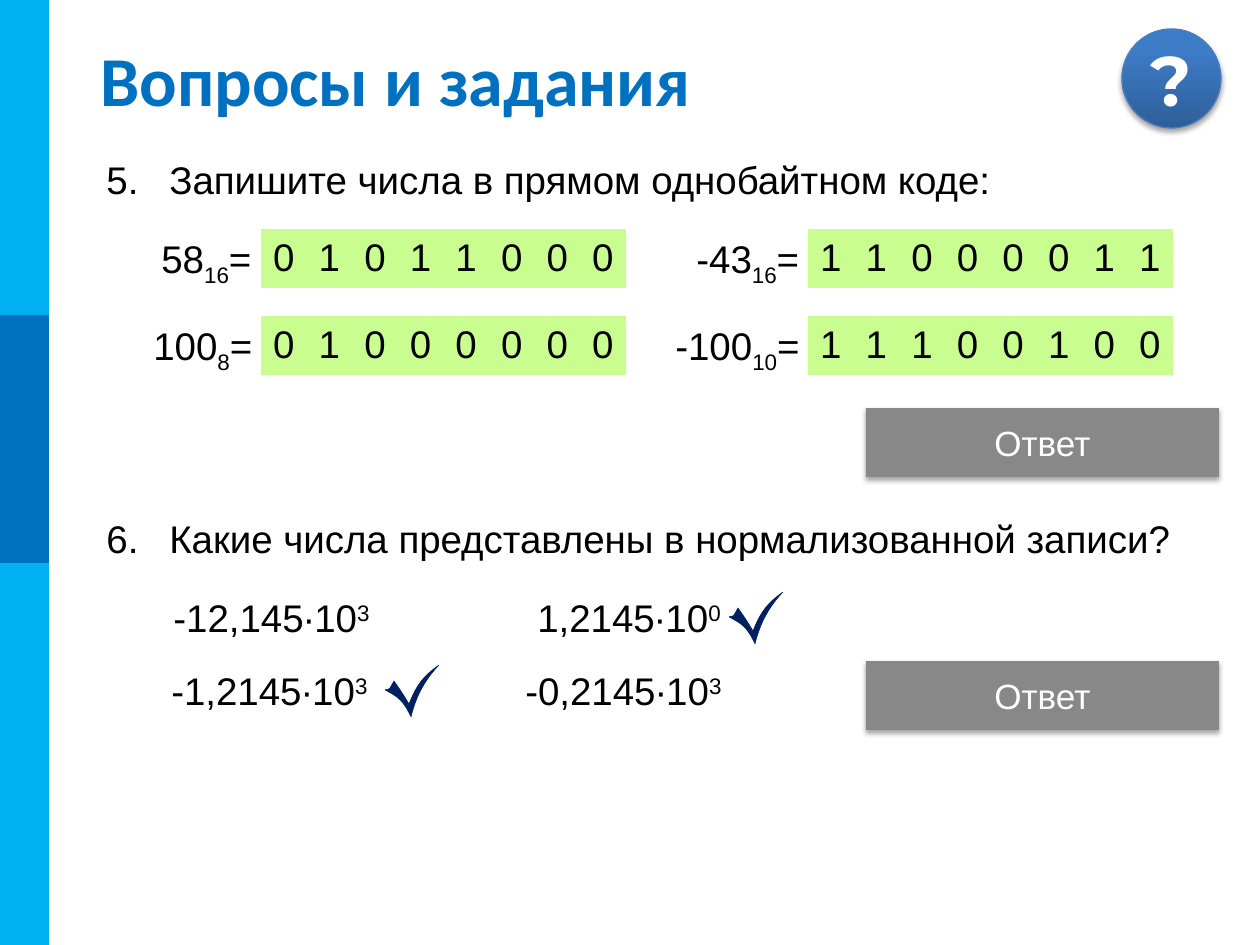
from dataclasses import dataclass

import pptx
import pptx.dml.color
import pptx.enum.shapes
import pptx.enum.text
import pptx.oxml
import pptx.oxml.ns
import pptx.util

PX = 914400 / 126
SHAPES = pptx.enum.shapes.MSO_SHAPE
ALIGN = pptx.enum.text.PP_ALIGN
ANCHOR = pptx.enum.text.MSO_ANCHOR
NO_GRID_STYLE = "{2D5ABB26-0587-4C30-8999-92F81FD0307C}"


@dataclass(frozen=True)
class Theme:
    sky: str = "00B0F0"
    blue: str = "0070C0"
    badge_low: str = "2F5F99"
    badge_high: str = "3D7CC7"
    badge_line: str = "4B7EBC"
    button: str = "888888"
    cell: str = "CAFD8F"
    tick: str = "002060"
    black: str = "000000"
    white: str = "FFFFFF"
    font: str = "Arial"
    title_font: str = "Calibri"
    badge_font: str = "Montserrat"
    title_size: int = 40
    body_size: int = 22
    button_size: int = 20


THEME = Theme()
SUB, SUPER = -25000, 30000

TITLE = "Вопросы и задания"
STRIPES = [(0, 945, THEME.sky), (315, 248, THEME.blue)]  # top, height, colour
QUESTIONS = [  # number, top, text
    (5, 150, "Запишите числа в прямом однобайтном коде:"),
    (6, 509, "Какие числа представлены в нормализованной записи?"),
]
CODES = [  # row, column, label left, number, base, bits
    (0, 0, 149, "58", "16", "01011000"),
    (0, 1, 684, "-43", "16", "11000011"),
    (1, 0, 141, "100", "8", "01000000"),
    (1, 1, 663, "-100", "10", "11100100"),
]
CODE_LEFTS = [261, 808]
CODE_LABEL_RIGHTS = [268, 818]
CODE_TOPS = [229, 316]
POWERS = [  # left, top, width, mantissa, exponent
    (161, 588, 233, "-12,145∙10", "3"),
    (525, 588, 213, "1,2145∙10", "0"),
    (159, 661, 226, "-1,2145∙10", "3"),
    (513, 661, 226, "-0,2145∙10", "3"),
]
BUTTON_TOPS = [408, 661]
TICKS = [(729, 592), (385, 665)]
TICK_CURVES = [  # two control points and an end point; one point is a line
    [(1, 24), (3, 25), (5, 23)],
    [(9, 16)],
    [(14, 23), (20, 32), (24, 39)],
    [(31, 21), (38, 11), (54, 0)],
    [(39, 16), (31, 32), (26, 52)],
    [(18, 35), (13, 32), (0, 25)],
]
TICK_START = (0, 25)


def emu(*lengths):
    return [round(length * PX) for length in lengths]


def rgb(colour):
    return pptx.dml.color.RGBColor.from_string(colour)


def write(frame, *spans, size=THEME.body_size, font=THEME.font, colour=THEME.black,
          bold=False, align=ALIGN.LEFT):
    """Fill the first paragraph; each span is a string or (string, baseline)."""
    para = frame.paragraphs[0]
    para.alignment = align
    for item in spans:
        text, baseline = (item, 0) if isinstance(item, str) else item
        span = para.add_run()
        span.text = text
        span.font.size = pptx.util.Pt(size)
        span.font.name = font
        span.font.bold = bold
        span.font.color.rgb = rgb(colour)
        if baseline:
            span.font._element.set("baseline", str(baseline))
    return para


def add_text(page, left, top, width, height, *spans, wrap=False, anchor=ANCHOR.TOP, **look):
    box = page.shapes.add_textbox(*emu(left, top, width, height))
    box.text_frame.word_wrap = wrap
    box.text_frame.vertical_anchor = anchor
    return write(box.text_frame, *spans, **look)


def add_block(page, kind, left, top, width, height, colour=None, shadow=False):
    block = page.shapes.add_shape(kind, *emu(left, top, width, height))
    block.shadow.inherit = False
    block.line.fill.background()
    if colour:
        block.fill.solid()
        block.fill.fore_color.rgb = rgb(colour)
    if shadow:
        effects = block._element.spPr.find(pptx.oxml.ns.qn("a:effectLst"))
        effects.append(pptx.oxml.parse_xml(
            f'<a:outerShdw {pptx.oxml.ns.nsdecls("a")} blurRad="39370" dist="22860" '
            'dir="5400000" rotWithShape="0"><a:srgbClr val="000000">'
            '<a:alpha val="35000"/></a:srgbClr></a:outerShdw>'))
    block.text_frame.vertical_anchor = ANCHOR.MIDDLE
    return block


def add_badge(page):
    badge = add_block(page, SHAPES.OVAL, 1122, 29, 99, 99, shadow=True)
    badge.fill.gradient()
    badge.fill.gradient_angle = 90
    looks = [(0, THEME.badge_low), (0.8, THEME.badge_high)]
    for stop, (position, colour) in zip(badge.fill.gradient_stops, looks):
        stop.position = position
        stop.color.rgb = rgb(colour)
    badge.line.color.rgb = rgb(THEME.badge_line)
    badge.line.width = pptx.util.Pt(0.75)
    badge.text_frame.word_wrap = False
    write(badge.text_frame, "?", size=THEME.title_size, font=THEME.badge_font,
          colour=THEME.white, bold=True, align=ALIGN.CENTER)


def add_question(page, number, top, text):
    para = add_text(page, 94, top, 1131, 59, text, wrap=True)
    properties = para._p.get_or_add_pPr()
    properties.set("marL", "457200")
    properties.set("indent", "-457200")
    properties.append(pptx.oxml.parse_xml(
        f'<a:buAutoNum {pptx.oxml.ns.nsdecls("a")} type="arabicPeriod" startAt="{number}"/>'))


def add_bits(page, left, top, bits):
    grid = page.shapes.add_table(1, len(bits), *emu(left, top, 365, 59)).table
    grid.first_row = grid.horz_banding = False
    grid._tbl.tblPr.find(pptx.oxml.ns.qn("a:tableStyleId")).text = NO_GRID_STYLE
    for column, cell, bit in zip(grid.columns, grid.iter_cells(), bits):
        column.width = round(365 / len(bits) * PX)
        cell.margin_left = cell.margin_right = 0
        cell.vertical_anchor = ANCHOR.MIDDLE
        cell.fill.solid()
        cell.fill.fore_color.rgb = rgb(THEME.cell)
        write(cell.text_frame, bit, align=ALIGN.CENTER)


def curve_points(start, controls, steps=10):
    """Points along a cubic Bezier curve, without its start."""
    for step in range(1, steps + 1):
        t = step / steps
        weights = ((1 - t) ** 3, 3 * t * (1 - t) ** 2, 3 * t * t * (1 - t), t ** 3)
        yield tuple(sum(weight * point[axis] for weight, point in zip(weights, [start, *controls]))
                    for axis in (0, 1))


def add_tick(page, left, top):
    points, start = [], TICK_START
    for curve in TICK_CURVES:
        points += curve if len(curve) == 1 else curve_points(start, curve)
        start = curve[-1]
    builder = page.shapes.build_freeform(*emu(*TICK_START))
    builder.add_line_segments([emu(*point) for point in points], close=True)
    tick = builder.convert_to_shape(*emu(left, top))
    tick.shadow.inherit = False
    tick.fill.solid()
    tick.fill.fore_color.rgb = rgb(THEME.tick)
    tick.line.color.rgb = rgb(THEME.tick)
    tick.line.width = pptx.util.Pt(0.25)


def main():
    deck = pptx.Presentation()
    deck.slide_width, deck.slide_height = emu(1260, 945)
    page = deck.slides.add_slide(deck.slide_layouts[6])
    for top, height, colour in STRIPES:
        add_block(page, SHAPES.RECTANGLE, 0, top, 49, height, colour)
    add_badge(page)
    add_text(page, 88, 38, 1137, 81, TITLE, wrap=True, anchor=ANCHOR.MIDDLE,
             size=THEME.title_size, font=THEME.title_font, colour=THEME.blue, bold=True)
    for question in QUESTIONS:
        add_question(page, *question)
    for row, column, left, number, base, bits in CODES:
        top = CODE_TOPS[row]
        add_text(page, left, top, CODE_LABEL_RIGHTS[column] - left, 59,
                 number, (base, SUB), "=")
        add_bits(page, CODE_LEFTS[column], top, bits)
    for left, top, width, mantissa, exponent in POWERS:
        add_text(page, left, top, width, 59, mantissa, (exponent, SUPER))
    for top in BUTTON_TOPS:
        button = add_block(page, SHAPES.RECTANGLE, 866, top, 353, 69, THEME.button, shadow=True)
        write(button.text_frame, "Ответ", size=THEME.button_size, colour=THEME.white,
              align=ALIGN.CENTER)
    for place in TICKS:
        add_tick(page, *place)
    deck.save("out.pptx")


if __name__ == "__main__":
    main()
